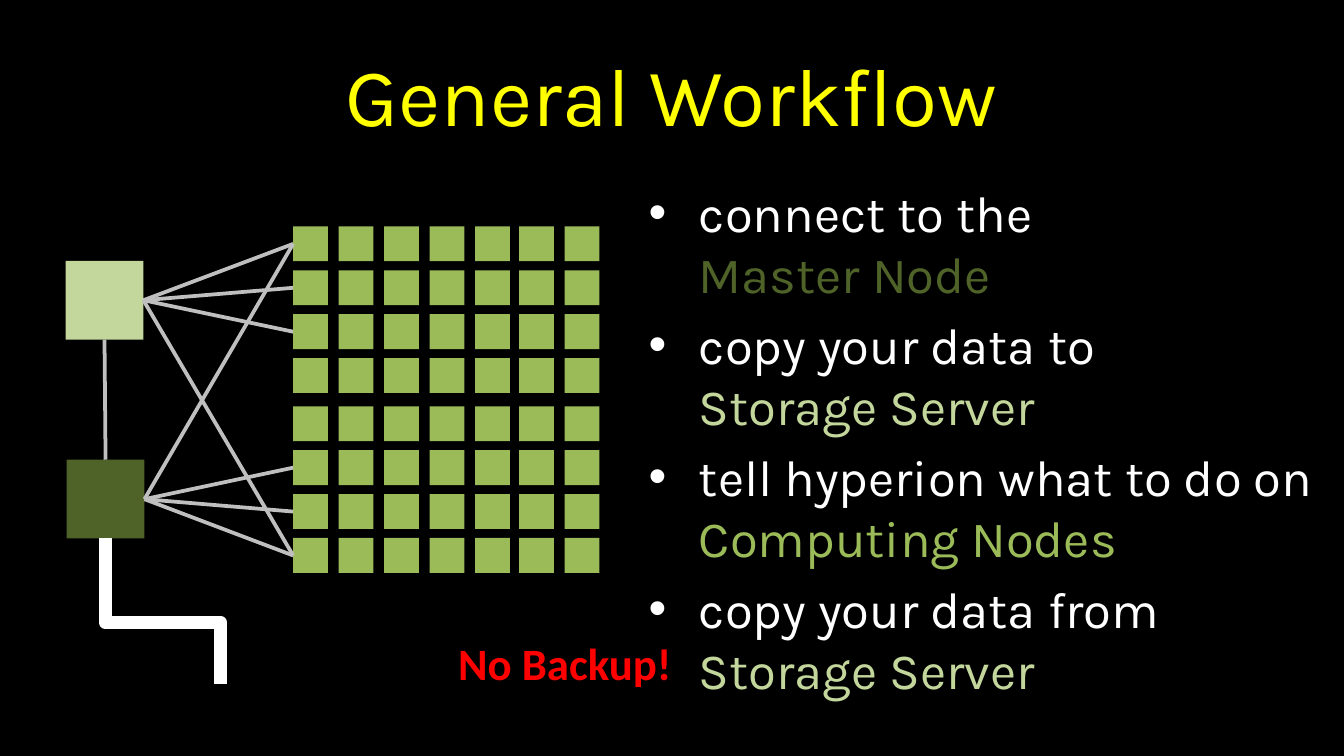
"""Build the General Workflow slide of a cluster."""
from lxml.etree import SubElement as Sub
from pptx import Presentation
from pptx.dml.color import RGBColor as RGB
from pptx.enum.shapes import MSO_CONNECTOR as Con, MSO_SHAPE as Kind
from pptx.enum.text import MSO_ANCHOR as Anchor, PP_ALIGN as Align
from pptx.oxml.ns import qn
from pptx.util import Cm, Pt


def paint(fill, tone):
    fill.solid()
    fill.fore_color.rgb = RGB.from_string(tone)


def write(para, text, tone, form):
    run = para.add_run()
    run.text = text
    for key, val in form.items():
        setattr(run.font, key, val)
    paint(run.font.fill, tone)


pale, dark, green = "C3D69B", "4F6228", "9BBB59"
white, gray = "FFFFFF", "BFBFBF"

deck = Presentation()
deck.slide_width, deck.slide_height = Cm(25.4), Cm(14.29)
slide = deck.slides.add_slide(deck.slide_layouts[6])
paint(slide.background.fill, "000000")
shapes = slide.shapes

texts = {
    "title": (1.27, 0.58, 22.86, 2.39),
    "steps": (12.01, 3.31, 13.16, 8.41),
    "alert": (8.41, 11.89, 4.65, 1.27),
}
frames = {}
for name, area in texts.items():
    frames[name] = shapes.add_textbox(*map(Cm, area)).text_frame
    frames[name].word_wrap = name != "alert"

frames["title"].vertical_anchor = Anchor.MIDDLE
head = frames["title"].paragraphs[0]
head.alignment = Align.CENTER
write(head, "General Workflow", "FFFF00", {"name": "Karla", "size": Pt(44)})
write(frames["alert"].paragraphs[0], "No Backup!", "FF0000",
      {"name": "Calibri", "size": Pt(24), "bold": True})

steps = [
    ("connect to the", "Master Node", dark),
    ("copy your data to", "Storage Server", pale),
    ("tell hyperion what to do on ", "Computing Nodes", green),
    ("copy your data from", "Storage Server", pale),
]
form = {"name": "Karla", "size": Pt(27.2)}
body = frames["steps"]
for num, (task, place, tone) in enumerate(steps):
    para = body.add_paragraph() if num else body.paragraphs[0]
    para.space_before = Pt(5.4)
    props = para._p.get_or_add_pPr()
    props.set("marL", str(Cm(0.95)))
    props.set("indent", str(Cm(-0.95)))
    Sub(props, qn("a:buFont"), typeface="Arial")
    Sub(props, qn("a:buChar"), char="•")
    write(para, task, white, form)
    if not task.endswith(" "):
        para.add_line_break()
    write(para, place, tone, form)

rects = [("storage", 1.24, 4.93, 1.47, 1.49, pale),
         ("master", 1.26, 8.69, 1.47, 1.49, dark)]
for row in range(8):
    top = 4.28 + 0.83 * row + 0.08 * (row > 3)
    for col in range(7):
        left = 5.54 + 0.86 * col - 0.03 * (col > 4)
        rects.append(((row, col), left, top, 0.66, 0.66, green))

nodes = {}
for key, *area, tone in rects:
    node = shapes.add_shape(Kind.RECTANGLE, *map(Cm, area))
    node.shadow.inherit = False
    paint(node.fill, tone)
    node.line.fill.background()
    nodes[key] = node

links = [("storage", 2, "master", 0)]
for hub, rows in {"storage": (0, 1, 2, 7), "master": (0, 5, 6, 7)}.items():
    links += [(hub, 3, (row, 0), 1) for row in rows]

wires = []
for start, out, end, into in links:
    one, two = nodes[start], nodes[end]
    wire = shapes.add_connector(Con.STRAIGHT, one.left, one.top, two.left, two.top)
    wire.begin_connect(one, out)
    wire.end_connect(two, into)
    wires.append((wire, gray, 2))

bent = shapes.add_connector(Con.ELBOW, *map(Cm, (4.46, 10.46, 1.7, 12.64)))
bent._element.spPr.find(qn("a:xfrm")).set("rot", "16200000")
geom = bent._element.spPr.find(qn("a:prstGeom"))
Sub(geom.find(qn("a:avLst")), qn("a:gd"), name="adj1", fmla="val 57900")
wires.append((bent, white, 7))

for wire, tone, width in wires:
    wire.line.width = Pt(width)
    paint(wire.line.fill, tone)
    Sub(wire._element.spPr, qn("a:effectLst"))

deck.save("out.pptx")
